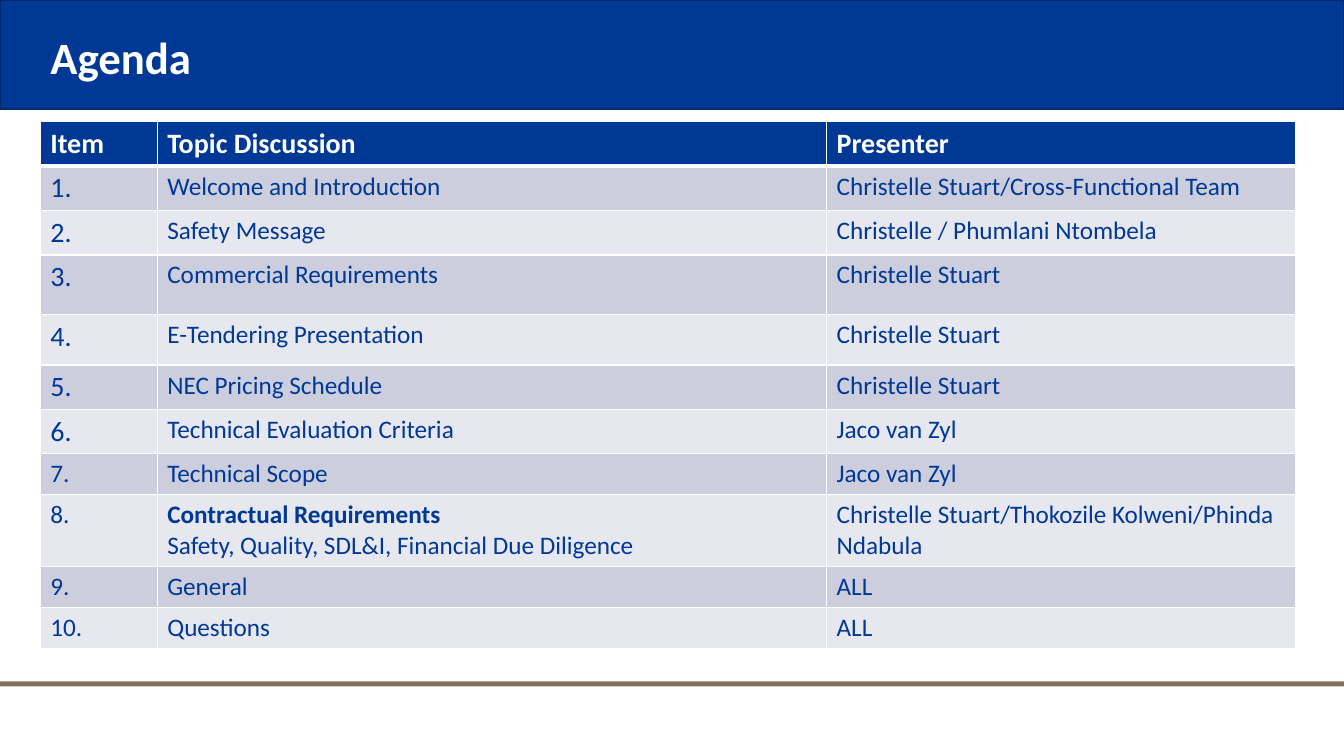
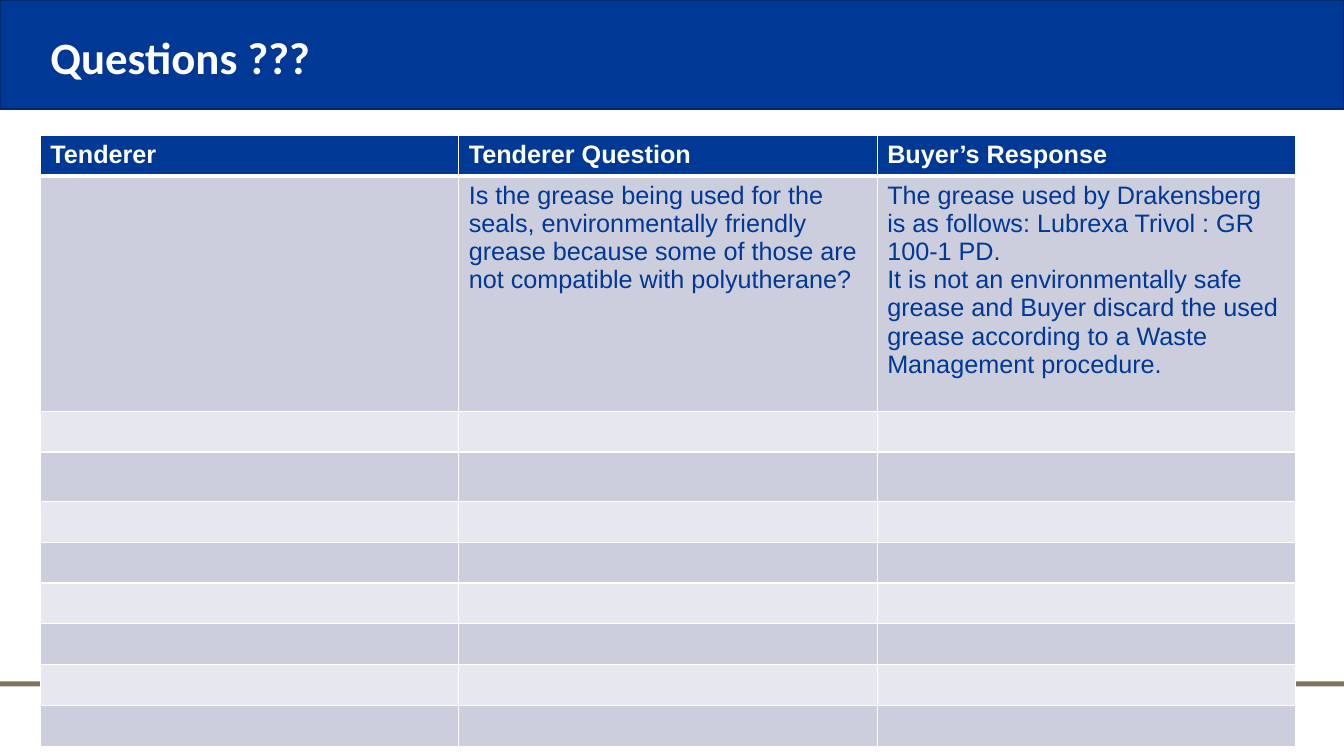
import dataclasses

import lxml.etree
import pptx
import pptx.dml.color
import pptx.enum.shapes
import pptx.enum.text
import pptx.oxml.ns
import pptx.util


@dataclasses.dataclass(frozen=True)
class Theme:
    """Colours, fonts and type sizes of the presentation."""
    blue: str = "003896"
    edge: str = "00296F"
    brown: str = "83725B"
    white: str = "FFFFFF"
    stripes: tuple = ("E7E8EF", "CCCEDD")
    heading_font: str = "Calibri"
    plain_font: str = "Arial"
    title: int = 32
    large: int = 20
    body: int = 18
    thin: int = 1
    thick: int = 3


def rgb(color):
    """Return a colour object for a hex string."""
    return pptx.dml.color.RGBColor.from_string(color)


def write(tf, text, *, font, size, color, bold=False, spacing=None):
    """Fill a text frame, one paragraph for each line of text."""
    for i, line in enumerate(text.split("\n")):
        p = tf.paragraphs[0] if i == 0 else tf.add_paragraph()
        p.alignment = pptx.enum.text.PP_ALIGN.LEFT
        if spacing:
            p.line_spacing = spacing
        r = p.add_run()
        r.text = line
        r.font.name, r.font.size, r.font.bold = font, pptx.util.Pt(size), bold
        r.font.color.rgb = rgb(color)


def border(cell, color, **widths):
    """Draw the sides of a cell, given as L, R, T and B in points."""
    qn = pptx.oxml.ns.qn
    tc_pr = cell.fill._xPr
    for i, (side, width) in enumerate(widths.items()):
        ln = lxml.etree.Element(qn(f"a:ln{side}"), w=str(pptx.util.Pt(width)))
        fill = lxml.etree.SubElement(ln, qn("a:solidFill"))
        lxml.etree.SubElement(fill, qn("a:srgbClr"), val=color)
        tc_pr.insert(i, ln)


class Deck:
    """Holds the style and the current slide on a 100 by 100 grid."""

    def __init__(self, theme):
        """Set the slide size and keep only the title of the layout."""
        self.theme = theme
        self.prs = pptx.Presentation()
        self.prs.slide_width = pptx.util.Inches(13.33)
        self.prs.slide_height = pptx.util.Inches(7.5)
        self.layout = self.prs.slide_layouts[5]
        for ph in list(self.layout.placeholders)[1:]:
            ph.element.getparent().remove(ph.element)
        self.s = None

    def x(self, cols):
        """Convert grid columns to a length."""
        return pptx.util.Emu(round(self.prs.slide_width * cols / 100))

    def y(self, rows):
        """Convert grid rows to a length."""
        return pptx.util.Emu(round(self.prs.slide_height * rows / 100))

    def band(self, top, height, fill, line=None):
        """Draw a full-width band."""
        sp = self.s.shapes.add_shape(
            pptx.enum.shapes.MSO_SHAPE.RECTANGLE,
            0, self.y(top), self.x(100), self.y(height))
        sp.shadow.inherit = False
        sp.fill.solid()
        sp.fill.fore_color.rgb = rgb(fill)
        if line:
            sp.line.color.rgb = rgb(line)
            sp.line.width = pptx.util.Pt(self.theme.thin)
        else:
            sp.line.fill.background()
        return sp

    def share_bands(self):
        """Put the header and footer bands on the layout."""
        t = self.theme
        bands = [self.band(0, 14.4, t.blue, t.edge),
                 self.band(90.13, 0.67, t.brown)]
        for sp in bands:
            self.layout.shapes.element.append(sp.element)

    def slide(self, title):
        """Start a slide with its title in the header band."""
        t = self.theme
        first = self.s is None
        self.s = self.prs.slides.add_slide(self.layout)
        if first:
            self.share_bands()
        sp = self.s.shapes.title
        sp.left, sp.top = self.x(3), self.y(3.07)
        sp.width, sp.height = self.x(78), self.y(9.73)
        tf = sp.text_frame
        tf.word_wrap = True
        tf.auto_size = pptx.enum.text.MSO_AUTO_SIZE.NONE
        tf.vertical_anchor = pptx.enum.text.MSO_ANCHOR.MIDDLE
        write(tf, title, font=t.heading_font, size=t.title,
              color=t.white, bold=True, spacing=0.9)

    def table(self, top, cols, heights, rows, *, font, head_size, large_rows=0):
        """Draw a striped table; large_rows sets how many labels are large."""
        t = self.theme
        tbl = self.s.shapes.add_table(
            len(heights), len(cols), self.x(3), self.y(top),
            self.x(sum(cols)), self.y(sum(heights))).table
        for col, width in zip(tbl.columns, cols):
            col.width = self.x(width)
        for i, height in enumerate(heights):
            tbl.rows[i].height = self.y(height)
            head = i == 0
            texts = rows[i] if i < len(rows) else [""] * len(cols)
            for j, text in enumerate(texts):
                cell = tbl.cell(i, j)
                cell.fill.solid()
                cell.fill.fore_color.rgb = rgb(t.blue if head else t.stripes[i % 2])
                border(cell, t.white, L=t.thin, R=t.thin,
                       T=t.thick if i == 1 else t.thin,
                       B=t.thick if head else t.thin)
                large = j == 0 and i <= large_rows
                size = head_size if head else t.large if large else t.body
                if text:
                    write(cell.text_frame, text, font=font, size=size,
                          color=t.white if head else t.blue, bold=head)
        return tbl


def agenda(deck):
    """Build the agenda slide."""
    topics = [
        ("Welcome and Introduction", "Christelle Stuart/Cross-Functional Team"),
        ("Safety Message", "Christelle / Phumlani Ntombela"),
        ("Commercial Requirements", "Christelle Stuart"),
        ("E-Tendering Presentation", "Christelle Stuart"),
        ("NEC Pricing Schedule", "Christelle Stuart"),
        ("Technical Evaluation Criteria", "Jaco van Zyl"),
        ("Technical Scope", "Jaco van Zyl"),
        ("Contractual Requirements\nSafety, Quality, SDL&I, Financial Due Diligence",
         "Christelle Stuart/Thokozile Kolweni/Phinda Ndabula"),
        ("General", "ALL"),
        ("Questions", "ALL"),
    ]
    rows = [("Item", "Topic Discussion", "Presenter")]
    rows += [(f"{n}.", *topic) for n, topic in enumerate(topics, 1)]
    heights = [5.87] * 3 + [7.87, 6.7] + [5.87] * 2 + [5.4, 9.47, 5.4, 5.4]
    deck.slide("Agenda")
    tbl = deck.table(16.1, [8.7, 49.8, 34.9], heights, rows,
                     font=deck.theme.heading_font,
                     head_size=deck.theme.large, large_rows=6)
    tbl.cell(8, 1).text_frame.paragraphs[0].runs[0].font.bold = True


def questions(deck):
    """Build the questions slide."""
    rows = [
        ("Tenderer", "Tenderer Question", "Buyer’s Response"),
        ("",
         "Is the grease being used for the seals, environmentally friendly grease "
         "because some of those are not compatible with polyutherane?",
         "The grease used by Drakensberg is as follows: Lubrexa Trivol : GR 100-1 PD.\n"
         "It is not an environmentally safe grease and Buyer discard the used grease "
         "according to a Waste Management procedure."),
    ]
    deck.slide("Questions ???")
    deck.table(17.9, [93.4 / 3] * 3, [5.4, 31.1, 5.4, 6.5] + [5.4] * 6, rows,
               font=deck.theme.plain_font, head_size=deck.theme.body)


def main():
    """Build and save the presentation."""
    deck = Deck(Theme())
    agenda(deck)
    questions(deck)
    deck.prs.save("out.pptx")


if __name__ == "__main__":
    main()
